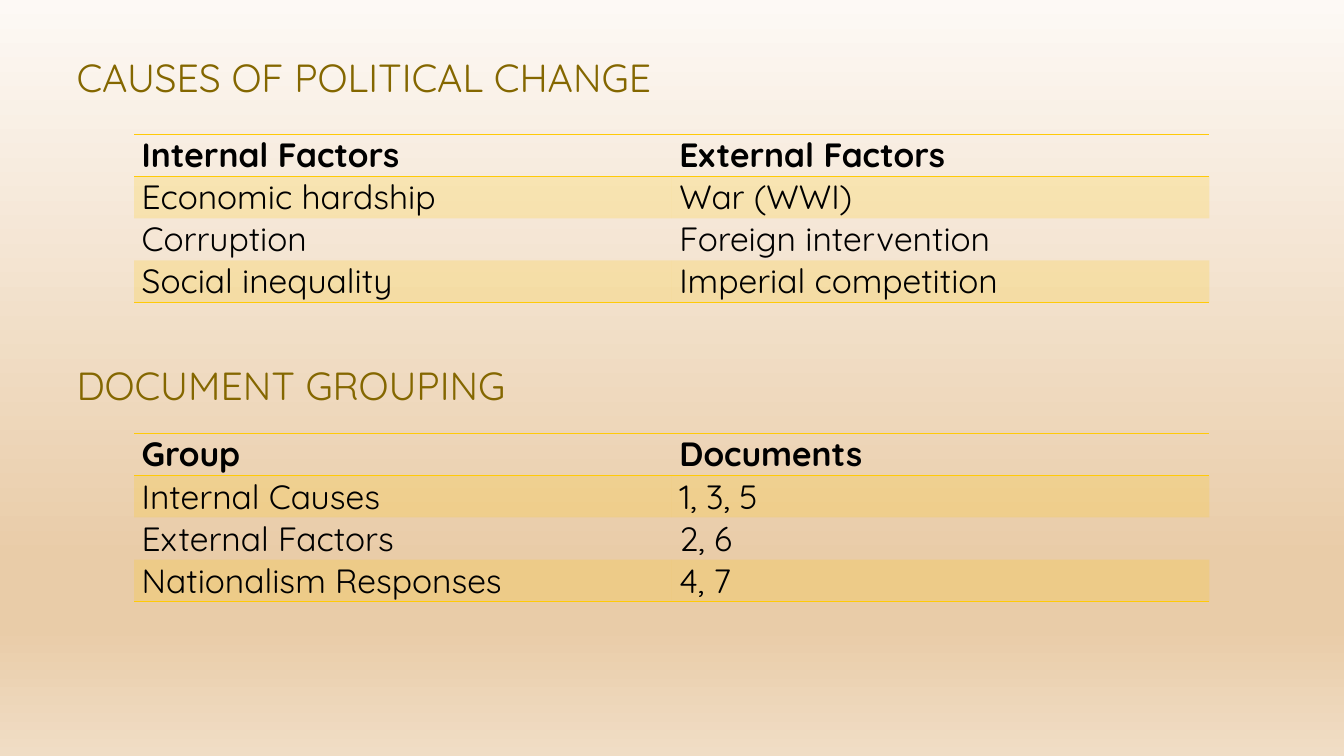
from lxml import etree
from pptx import Presentation
from pptx.dml.color import RGBColor
from pptx.enum import shapes, text
from pptx.oxml import parse_xml
from pptx.oxml.ns import nsdecls, qn
from pptx.util import Cm, Pt

GOLD = "FFCA08"
NO_STYLE = "{2D5ABB26-0587-4C30-8999-92F81FD0307C}"


def color(hex_code):
    return RGBColor.from_string(hex_code)


def write(frame, words, size=24, ink="000000", bold=False, spacing=None):
    paragraph = frame.paragraphs[0]
    paragraph.line_spacing = spacing
    run = paragraph.add_run()
    run.text = words
    run.font.name = "Quicksand"
    run.font.size = Pt(size)
    run.font.bold = bold
    run.font.color.rgb = color(ink)


prs = Presentation()
prs.slide_width, prs.slide_height = Cm(33.87), Cm(19.05)
slide = prs.slides.add_slide(prs.slide_layouts[6])

# Warm gradient behind everything
backdrop = slide.shapes.add_shape(
    shapes.MSO_SHAPE.RECTANGLE, 0, 0, prs.slide_width, prs.slide_height)
backdrop.shadow.inherit = False
backdrop.line.fill.background()
backdrop.fill.gradient()
backdrop.fill.gradient_angle = 270
stops = backdrop.fill._fill._gradFill.find(qn("a:gsLst"))
for stop in list(stops):
    stops.remove(stop)
for percent, shade in [(0, "FDF9F5"), (74, "E9CCA8"), (83, "E9CCA8"), (100, "F0DDC5")]:
    stops.append(parse_xml(
        f'<a:gs {nsdecls("a")} pos="{percent * 1000}"><a:srgbClr val="{shade}"/></a:gs>'))

# Each section: heading, heading top, table top, rows
sections = [
    ("CAUSES OF POLITICAL CHANGE", 0.43, 3.38, [
        ("Internal Factors", "External Factors"),
        ("Economic hardship", "War (WWI)"),
        ("Corruption", "Foreign intervention"),
        ("Social inequality", "Imperial competition"),
    ]),
    ("DOCUMENT GROUPING", 8.18, 10.92, [
        ("Group", "Documents"),
        ("Internal Causes", "1, 3, 5"),
        ("External Factors", "2, 6"),
        ("Nationalism Responses", "4, 7"),
    ]),
]

for title, title_top, table_top, rows in sections:
    heading = slide.shapes.add_textbox(Cm(1.68), Cm(title_top), Cm(29.64), Cm(2.24)).text_frame
    heading.word_wrap = True
    heading.vertical_anchor = text.MSO_ANCHOR.BOTTOM
    write(heading, title, size=28, ink="846700", spacing=0.9)

    table = slide.shapes.add_table(
        len(rows), 2, Cm(3.38), Cm(table_top), Cm(27.1), Cm(1.06 * len(rows))).table
    table.first_row = table.horz_banding = False
    table._tbl.tblPr.find(qn("a:tableStyleId")).text = NO_STYLE

    for r, row in enumerate(rows):
        for c, words in enumerate(row):
            cell = table.cell(r, c)
            cell.margin_left = cell.margin_right = Cm(0.19)
            cell.margin_top = cell.margin_bottom = 0
            write(cell.text_frame, words, bold=r == 0)

            # Rules above and below the header and under the last row
            edges = {0: ["lnT", "lnB"], len(rows) - 1: ["lnB"]}.get(r, [])
            properties = cell._tc.get_or_add_tcPr()
            for edge in edges:
                properties.append(parse_xml(
                    f'<a:{edge} {nsdecls("a")} w="12700"><a:solidFill>'
                    f'<a:srgbClr val="{GOLD}"/></a:solidFill></a:{edge}>'))

            # Translucent gold on every other row
            if r % 2:
                cell.fill.solid()
                cell.fill.fore_color.rgb = color(GOLD)
                tint = properties.find(qn("a:solidFill")).find(qn("a:srgbClr"))
                etree.SubElement(tint, qn("a:alpha"), val="20000")
            else:
                cell.fill.background()

prs.save("out.pptx")
